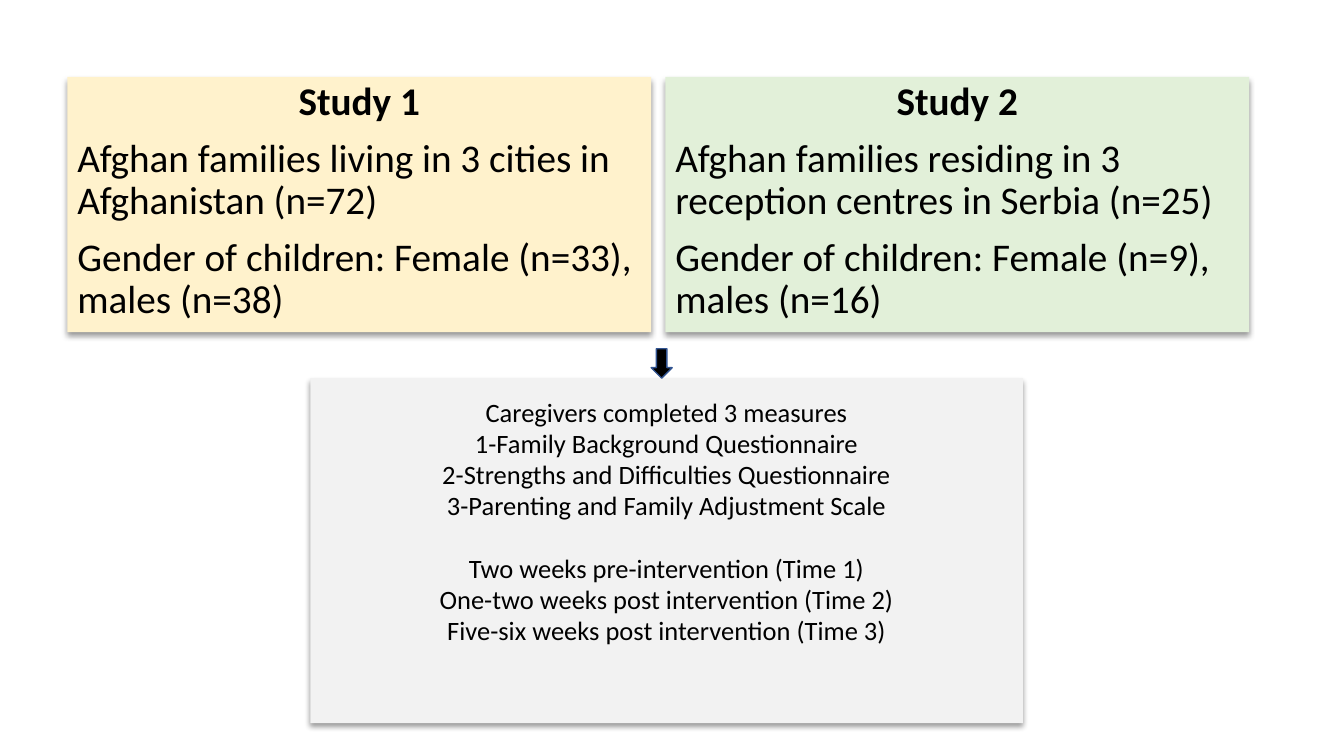
import pptx
import pptx.util
import pptx.dml.color
import pptx.enum.shapes
import pptx.enum.text
import pptx.oxml
import pptx.oxml.ns

Cm, Pt = pptx.util.Cm, pptx.util.Pt
ALIGN = pptx.enum.text.PP_ALIGN
SHAPE = pptx.enum.shapes.MSO_SHAPE


def rgb(value):
    return pptx.dml.color.RGBColor.from_string(value)


def fill_panel(sp, color, paragraphs, size, spacing, top):
    """Fill a panel, give it a soft shadow and write (text, paragraph formats, bold) rows."""
    sp.fill.solid()
    sp.fill.fore_color.rgb = rgb(color)
    sp.line.fill.background()
    sp.shadow.inherit = False
    sp._element.spPr.find(pptx.oxml.ns.qn("a:effectLst")).append(pptx.oxml.parse_xml(
        f'<a:outerShdw {pptx.oxml.ns.nsdecls("a")} blurRad="50800" dist="38100" dir="5400000" '
        'rotWithShape="0"><a:srgbClr val="000000"><a:alpha val="40000"/></a:srgbClr></a:outerShdw>'))
    tf = sp.text_frame
    frame = {"word_wrap": True, "auto_size": pptx.enum.text.MSO_AUTO_SIZE.NONE,
             "vertical_anchor": pptx.enum.text.MSO_ANCHOR.TOP, "margin_top": top}
    for name, value in frame.items():
        setattr(tf, name, value)
    for i, (text, formats, bold) in enumerate(paragraphs):
        p = tf.paragraphs[0] if i == 0 else tf.add_paragraph()
        for name, value in {"line_spacing": spacing, **formats}.items():
            setattr(p, name, value)
        r = p.add_run()
        r.text = text
        for name, value in {"name": "Calibri", "size": Pt(size), "bold": bold}.items():
            setattr(r.font, name, value)
        r.font.color.rgb = rgb("000000")


prs = pptx.Presentation()
prs.slide_width, prs.slide_height = Cm(33.87), Cm(19.05)
s = prs.slides.add_slide(prs.slide_layouts[5])

# Measures and their timing
measures = ["Caregivers completed 3 measures",
            "1-Family Background Questionnaire",
            "2-Strengths and Difficulties Questionnaire",
            "3-Parenting and Family Adjustment Scale"]
times = ["Two weeks pre-intervention (Time 1)",
         "One-two weeks post intervention (Time 2)",
         "Five-six weeks post intervention (Time 3)"]
title = s.shapes.title
box = {"left": Cm(7.82), "top": Cm(9.53), "width": Cm(17.96), "height": Cm(8.69)}
for name, value in box.items():
    setattr(title, name, value)
rows = [(text, {"alignment": ALIGN.CENTER, "space_before": Pt(22.6 if text == times[0] else 0)}, False)
        for text in measures + times]
fill_panel(title, "F2F2F2", rows, 18.9, 0.98, Cm(0.48))

# The two studies, side by side
studies = [
    ("FFF2CC", "Study 1", "Afghan families living in 3 cities in Afghanistan (n=72)",
     "Gender of children: Female (n=33), males (n=38)"),
    ("E2F0D9", "Study 2", "Afghan families residing in 3 reception centres in Serbia (n=25)",
     "Gender of children: Female (n=9), males (n=16)"),
]
for i, (color, heading, *details) in enumerate(studies):
    sp = s.shapes.add_shape(SHAPE.RECTANGLE, Cm(1.7 + 15.07 * i), Cm(1.94), Cm(14.71), Cm(6.43))
    rows = [(heading, {"alignment": ALIGN.CENTER}, True)]
    rows += [(text, {"alignment": ALIGN.LEFT, "space_before": Pt(10)}, False) for text in details]
    fill_panel(sp, color, rows, 28, 0.9, Cm(0.13))

arrow = s.shapes.add_shape(SHAPE.DOWN_ARROW, Cm(16.41), Cm(8.79), Cm(0.53), Cm(0.74))
arrow.shadow.inherit = False
arrow.fill.solid()
arrow.fill.fore_color.rgb = rgb("000000")
arrow.line.color.rgb = rgb("325491")
arrow.line.width = Pt(1)

prs.save("out.pptx")
